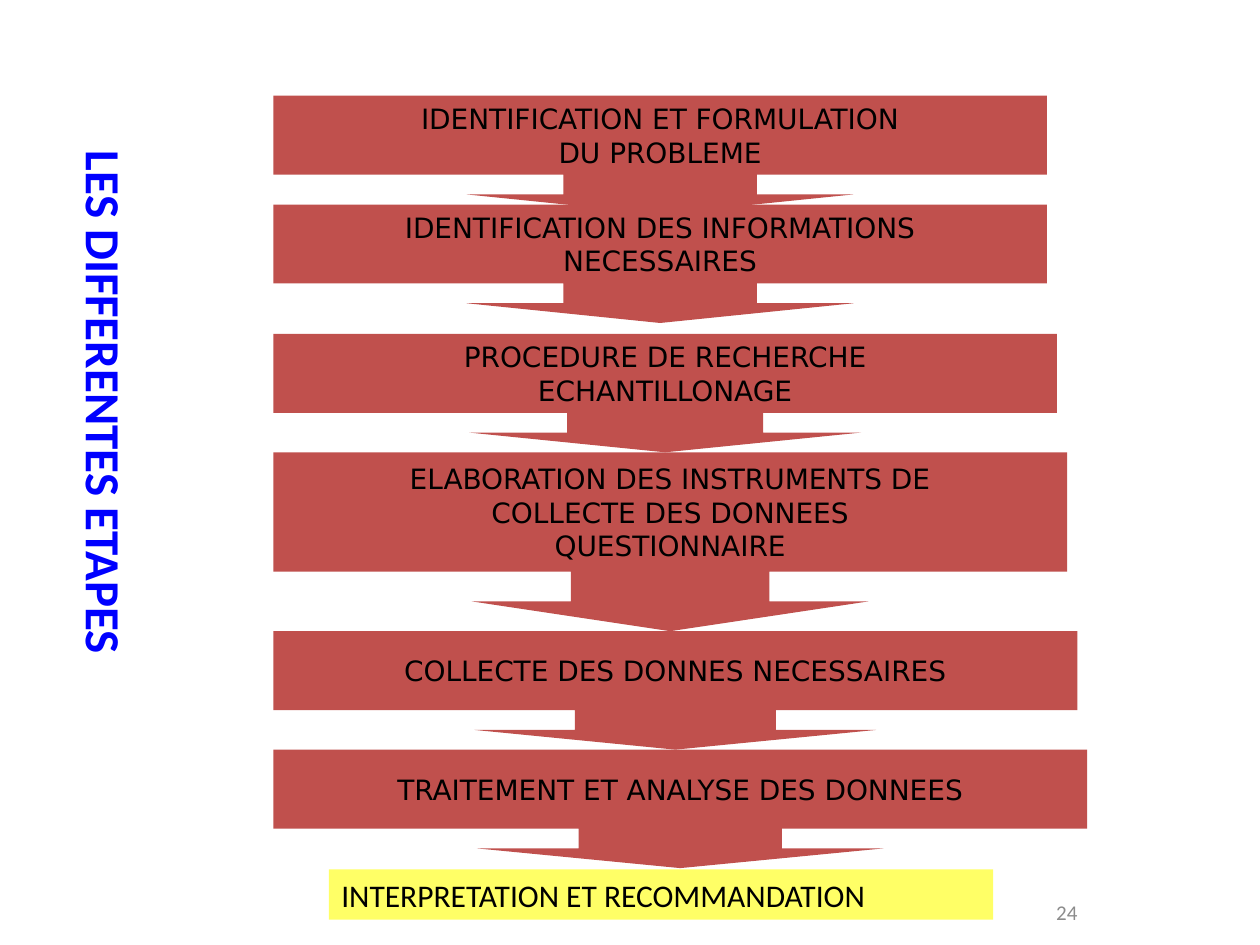
from pptx import Presentation
from pptx.dml.color import RGBColor
from pptx.enum import shapes, text
from pptx.util import Pt

RED, YELLOW, BLUE = "C0504D", "FFFF66", "0000FF"
BLACK, GREY = "000000", "8C8C8C"
LEFT = 156.2

# top, width, height, lines
STEPS = [
    (54.7, 442.1, 67.7, ["IDENTIFICATION ET FORMULATION", "DU PROBLEME"]),
    (116.9, 442.1, 67.7, ["IDENTIFICATION DES INFORMATIONS", "NECESSAIRES"]),
    (190.8, 447.8, 67.7, ["PROCEDURE DE RECHERCHE", "ECHANTILLONAGE"]),
    (258.5, 453.6, 102.2, ["ELABORATION DES INSTRUMENTS DE",
                           "COLLECTE DES DONNEES", "QUESTIONNAIRE"]),
    (360.7, 459.4, 67.7, ["COLLECTE DES DONNES NECESSAIRES"]),
    (428.4, 465.1, 67.7, ["TRAITEMENT ET ANALYSE DES DONNEES"]),
]


def color(code):
    return RGBColor.from_string(code)


def write(shape, lines, size, face="Calibri", ink=BLACK, bold=False,
          align=text.PP_ALIGN.LEFT, anchor=text.MSO_ANCHOR.MIDDLE, wrap=False):
    frame = shape.text_frame
    frame.word_wrap = wrap
    frame.vertical_anchor = anchor
    frame.text = "\n".join(lines)
    for para in frame.paragraphs:
        para.alignment = align
        font = para.font
        font.size, font.name, font.bold = Pt(size), face, bold
        font.color.rgb = color(ink)


def block(slide, kind, box, fill):
    shape = slide.shapes.add_shape(kind, *map(Pt, box))
    shape.shadow.inherit = False
    shape.fill.solid()
    shape.fill.fore_color.rgb = color(fill)
    shape.line.fill.background()
    return shape


def step(slide, top, width, height, lines):
    shape = block(slide, shapes.MSO_SHAPE.DOWN_ARROW_CALLOUT,
                  (LEFT, top, width, height), RED)
    # Stem is a quarter of the width, head is half of it
    part = width / height / 4
    for i, value in enumerate((part, part, 1 / 6, 2 / 3)):
        shape.adjustments[i] = value
    write(shape, lines, 16, "DejaVu Sans", align=text.PP_ALIGN.CENTER)


def label(slide, box, words, size, **style):
    shape = slide.shapes.add_textbox(*map(Pt, box))
    write(shape, [words], size, wrap=True, **style)
    return shape


def main():
    deck = Presentation()
    deck.slide_width, deck.slide_height = Pt(720), Pt(540)
    slide = deck.slides.add_slide(deck.slide_layouts[6])

    # Slide number
    label(slide, (525.6, 503.3, 168, 36), "24", 12, ink=GREY,
          align=text.PP_ALIGN.CENTER)

    # Chain of steps
    for item in STEPS:
        step(slide, *item)

    # Final step
    last = block(slide, shapes.MSO_SHAPE.RECTANGLE,
                 (188, 496.8, 379.5, 28.8), YELLOW)
    write(last, ["INTERPRETATION ET RECOMMANDATION"], 18,
          anchor=text.MSO_ANCHOR.TOP)

    # Vertical title
    title = label(slide, (32.4, 79.2, 48.2, 460.8), "LES DIFFERENTES ETAPES",
                  28, ink=BLUE, bold=True, anchor=text.MSO_ANCHOR.TOP)
    title.text_frame._txBody.bodyPr.set("vert", "eaVert")

    deck.save("out.pptx")


if __name__ == "__main__":
    main()
